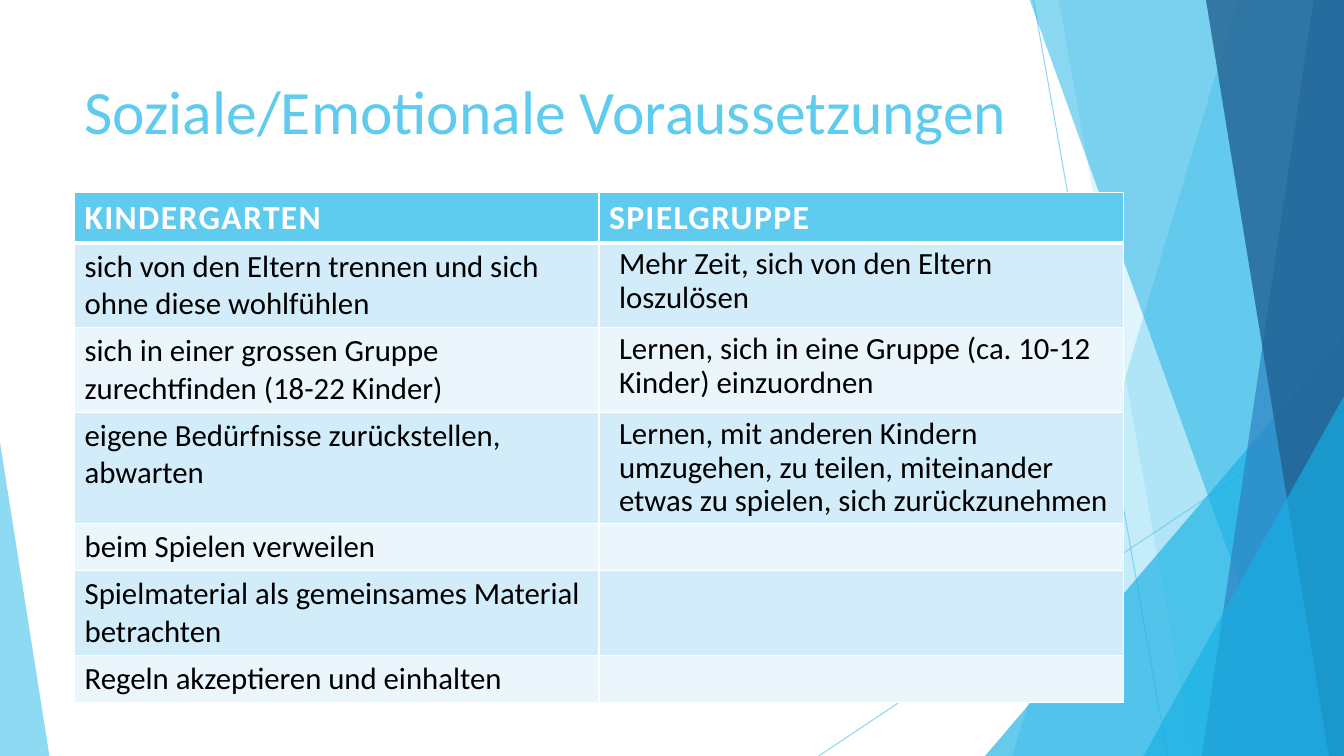
from lxml import etree
from pptx import Presentation
from pptx.dml.color import RGBColor
from pptx.enum.shapes import MSO_CONNECTOR, MSO_SHAPE
from pptx.enum.text import MSO_ANCHOR
from pptx.oxml.ns import qn
from pptx.util import Inches, Pt

STRAIGHT = MSO_CONNECTOR.STRAIGHT
TRIANGLE = MSO_SHAPE.ISOSCELES_TRIANGLE
TOP_ANCHOR = MSO_ANCHOR.TOP

FONT = "Calibri"
WIDTH, HEIGHT = 13.33, 7.5
FACET_TOP = -0.01
COLORS = {
    "sky": "5FCBEF",
    "cyan": "17B0E4",
    "blue": "2E83C3",
    "navy": "226292",
    "band_dark": "D2ECF9",
    "band_light": "EAF6FC",
    "white": "FFFFFF",
    "black": "000000",
}

HEADERS = ("KINDERGARTEN", "SPIELGRUPPE")
REQUIREMENTS = [
    ("sich von den Eltern trennen und sich ohne diese wohlfühlen",
     "Mehr Zeit, sich von den Eltern loszulösen"),
    ("sich in einer grossen Gruppe zurechtfinden (18-22 Kinder)",
     "Lernen, sich in eine Gruppe (ca. 10-12 Kinder) einzuordnen"),
    ("eigene Bedürfnisse zurückstellen, abwarten",
     "Lernen, mit anderen Kindern umzugehen, zu teilen, miteinander "
     "etwas zu spielen, sich zurückzunehmen"),
    ("beim Spielen verweilen", ""),
    ("Spielmaterial als gemeinsames Material betrachten", ""),
    ("Regeln akzeptieren und einhalten", ""),
]
ROW_HEIGHTS = (0.5, 0.84, 0.84, 1.1, 0.47, 0.84, 0.47)


def rgb(name):
    return RGBColor.from_string(COLORS[name])


def set_opacity(fill_parent, percent):
    color = fill_parent.find(".//" + qn("a:srgbClr"))
    etree.SubElement(color, qn("a:alpha"), val=str(percent * 1000))


def style_facet(facet, color, opacity):
    facet.shadow.inherit = False
    facet.fill.solid()
    facet.fill.fore_color.rgb = rgb(color)
    set_opacity(facet._element.spPr, opacity)
    facet.line.fill.background()


def add_ray(slide, start, end):
    ray = slide.shapes.add_connector(
        STRAIGHT, *(Inches(value) for value in start + end))
    ray.line.color.rgb = rgb("sky")
    ray.line.width = Pt(0.75)
    set_opacity(ray._element.spPr, 70)
    etree.SubElement(ray._element.spPr, qn("a:effectLst"))


def add_band(slide, top_x, bottom_x, color, opacity):
    """Band between a slanted left edge and the right edge of the slide."""
    builder = slide.shapes.build_freeform(Inches(top_x), Inches(FACET_TOP))
    corners = [(WIDTH, FACET_TOP), (WIDTH, HEIGHT), (bottom_x, HEIGHT)]
    builder.add_line_segments([(Inches(x), Inches(y)) for x, y in corners])
    style_facet(builder.convert_to_shape(), color, opacity)


def add_corner(slide, left, top, width, apex, color, opacity):
    """Right-angled triangle standing on the bottom edge of the slide."""
    corner = slide.shapes.add_shape(
        TRIANGLE, Inches(left), Inches(top), Inches(width), Inches(HEIGHT - top))
    corner.adjustments[0] = apex
    style_facet(corner, color, opacity)


def format_text(paragraph, size, color, bold=False):
    paragraph.font.name = FONT
    for run in paragraph.runs:
        run.font.name = FONT
        run.font.size = Pt(size)
        run.font.bold = bold
        run.font.color.rgb = rgb(color)


def add_title(slide, title):
    box = slide.shapes.add_textbox(
        Inches(0.74), Inches(0.67), Inches(9.4), Inches(1.44))
    frame = box.text_frame
    frame.word_wrap = True
    frame.vertical_anchor = TOP_ANCHOR
    frame.text = title
    format_text(frame.paragraphs[0], 44, "sky")


def set_borders(cell, top=1, bottom=1):
    properties = cell._tc.get_or_add_tcPr()
    for side, points in (("L", 1), ("R", 1), ("T", top), ("B", bottom)):
        border = etree.SubElement(
            properties, qn(f"a:ln{side}"), w=str(Pt(points)))
        fill = etree.SubElement(border, qn("a:solidFill"))
        etree.SubElement(fill, qn("a:srgbClr"), val=COLORS["white"])


def fill_cell(cell, text, color):
    cell.fill.solid()
    cell.fill.fore_color.rgb = rgb(color)
    cell.text_frame.text = text
    return cell.text_frame.paragraphs[0]


def add_comparison(slide):
    table = slide.shapes.add_table(
        len(ROW_HEIGHTS), len(HEADERS), Inches(0.74), Inches(1.91),
        Inches(10.4), Inches(sum(ROW_HEIGHTS))).table
    for column in table.columns:
        column.width = Inches(5.2)
    for row, height in zip(table.rows, ROW_HEIGHTS):
        row.height = Inches(height)

    # Header row
    for col, header in enumerate(HEADERS):
        cell = table.cell(0, col)
        set_borders(cell, bottom=3)
        paragraph = fill_cell(cell, header, "sky")
        format_text(paragraph, 24, "white", bold=True)
        paragraph.runs[0].font._element.set("spc", "100")

    # Banded body rows, right column set in and tighter
    for row, requirement in enumerate(REQUIREMENTS, start=1):
        band = "band_dark" if row % 2 else "band_light"
        for col, text in enumerate(requirement):
            cell = table.cell(row, col)
            set_borders(cell, top=3 if row == 1 else 1)
            paragraph = fill_cell(cell, text, band)
            format_text(paragraph, 22, "black")
            if col == 1:
                cell.margin_left = Inches(0.2)
                paragraph.line_spacing = 0.9


def add_backdrop(slide):
    add_ray(slide, (10.25, 0), (11.58, HEIGHT))
    add_ray(slide, (WIDTH, 4.03), (8.12, HEIGHT))
    add_band(slide, 12.28, 10.04, "sky", 36)
    add_band(slide, 10.5, 11.83, "sky", 20)
    add_corner(slide, 9.77, 3.33, 3.56, 1, "cyan", 66)
    add_band(slide, 10.21, 12.91, "cyan", 50)
    add_band(slide, 13.03, 11.92, "blue", 70)
    add_band(slide, 11.96, 13.18, "navy", 80)
    add_corner(slide, 11.34, 3.93, 1.99, 1, "cyan", 66)
    add_corner(slide, 0, 4.39, 0.49, 0, "sky", 70)


def main():
    presentation = Presentation()
    presentation.slide_width = Inches(WIDTH)
    presentation.slide_height = Inches(HEIGHT)
    slide = presentation.slides.add_slide(presentation.slide_layouts[6])
    add_backdrop(slide)
    add_title(slide, "Soziale/Emotionale Voraussetzungen")
    add_comparison(slide)
    presentation.save("out.pptx")


if __name__ == "__main__":
    main()
